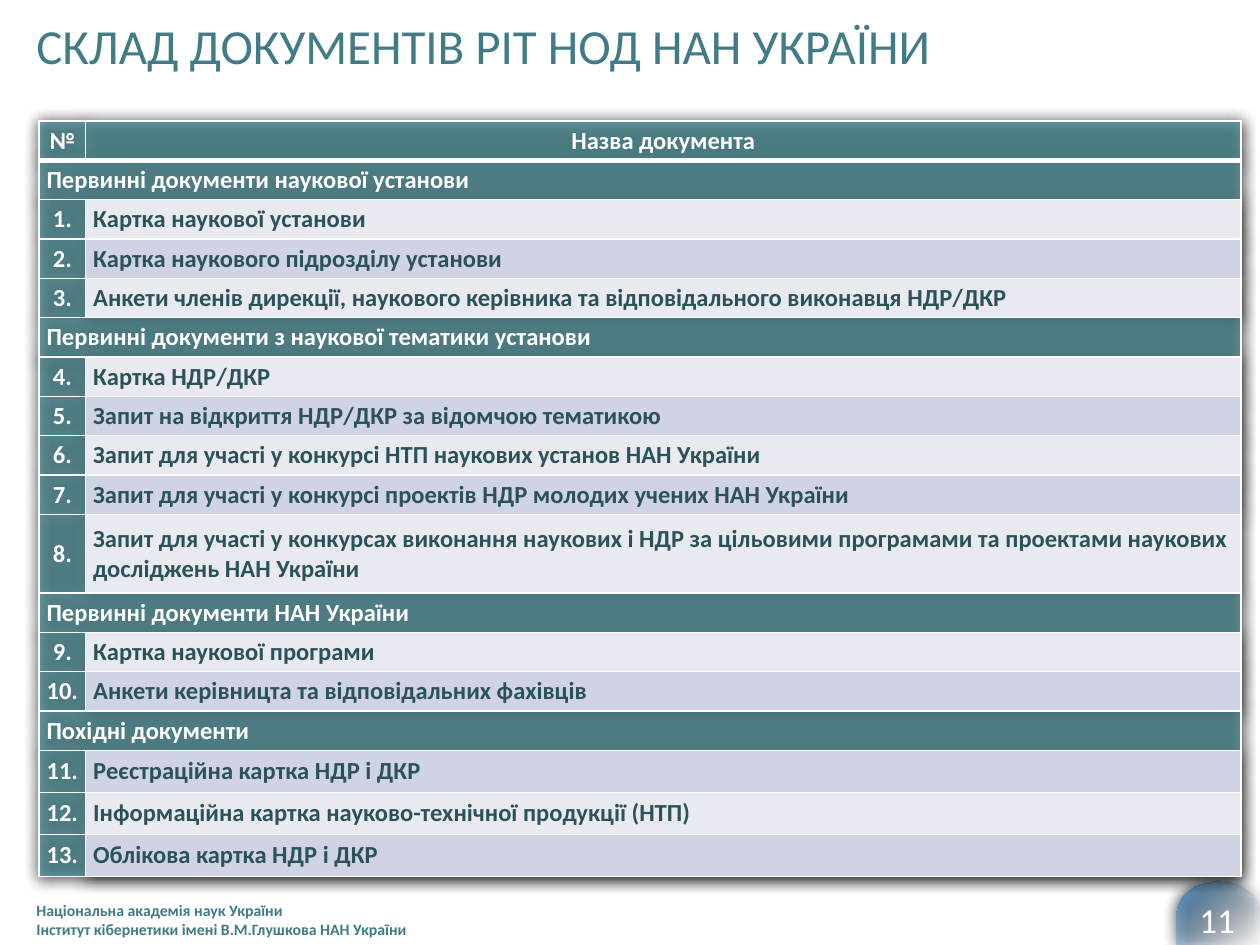
from itertools import count

from lxml.etree import SubElement
from pptx import Presentation
from pptx.dml.color import RGBColor
from pptx.enum.shapes import MSO_SHAPE as Shape
from pptx.enum.text import MSO_ANCHOR as Anchor, PP_ALIGN as Align
from pptx.oxml import parse_xml
from pptx.oxml.ns import nsdecls, qn
from pptx.util import Inches, Pt

COLORS = {
    "title": "417B85", "number": "FEFFFF", "white": "FFFFFF", "black": "000000",
    "teal": "4D9099", "ink": "2B5259", "light": "E9EAF1", "dark": "D0D3E3",
    "mist": "E5E9EE", "blue": "3477B2",
}
HEADINGS = ("№", "Назва документа")
SECTIONS = [
    ("Первинні документи наукової установи", [
        "Картка наукової установи",
        "Картка наукового підрозділу установи",
        "Анкети членів дирекції, наукового керівника та відповідального виконавця НДР/ДКР",
    ]),
    ("Первинні документи з наукової тематики установи", [
        "Картка НДР/ДКР",
        "Запит на відкриття НДР/ДКР за відомчою тематикою",
        "Запит для участі у конкурсі НТП наукових установ НАН України",
        "Запит для участі у конкурсі проектів НДР молодих учених НАН України",
        "Запит для участі у конкурсах виконання наукових і НДР за цільовими програмами "
        "та проектами наукових досліджень НАН України",
    ]),
    ("Первинні документи НАН України", [
        "Картка наукової програми",
        "Анкети керівницта та відповідальних фахівців",
    ]),
    ("Похідні документи", [
        "Реєстраційна картка НДР і ДКР",
        "Інформаційна картка науково-технічної продукції (НТП)",
        "Облікова картка НДР і ДКР",
    ]),
]
ROW = 5 / 16
LONG_ROW, LONG_TEXT = 2 * ROW, 100
TALL_ROW, TALL_COUNT = 1 / 3, 3
COLUMNS = (0.37, 9.17)


def write(frame, text, size=14, color="white", bold=False, align=Align.LEFT):
    """Fill a text frame, one paragraph for each line of text."""
    frame.word_wrap = True
    frame.text = text
    for para in frame.paragraphs:
        para.alignment = align
        for span in para.runs:
            span.font.name = "Calibri"
            span.font.size = Pt(size)
            span.font.bold = bold
            span.font.color.rgb = RGBColor.from_string(COLORS[color])


def add_text(page, box, text, **style):
    """Place a vertically centred text box."""
    label = page.shapes.add_textbox(*map(Inches, box))
    write(label.text_frame, text, **style)
    label.text_frame.vertical_anchor = Anchor.MIDDLE


def add_color(parent, color, opacity=100):
    """Append a colour element with its opacity in per cent."""
    tint = SubElement(parent, qn("a:srgbClr"), val=COLORS[color])
    SubElement(tint, qn("a:alpha"), val=str(opacity * 1000))


def set_gradient(shape, stops, angle):
    """Give a shape a linear gradient of (position, colour, opacity) stops."""
    gradient = parse_xml(f'<a:gradFill {nsdecls("a")}><a:gsLst/></a:gradFill>')
    for position, color, opacity in stops:
        stop = SubElement(gradient[0], qn("a:gs"), pos=str(position * 1000))
        add_color(stop, color, opacity)
    SubElement(gradient, qn("a:lin"), ang=str(angle * 60000), scaled="0")
    shape._element.spPr.find(qn("a:prstGeom")).addnext(gradient)


def soft_shadow():
    """Return an effect list with the blurred black shadow."""
    effects = parse_xml(f'<a:effectLst {nsdecls("a")}/>')
    shadow = SubElement(effects, qn("a:outerShdw"), blurRad=str(Pt(8.5)),
                        dist=str(Pt(1)), dir="5400000", algn="ctr", rotWithShape="0")
    add_color(shadow, "black")
    return effects


def add_title(page, box, text):
    """Place the title on its fading white band."""
    band = page.shapes.add_shape(Shape.RECTANGLE, *map(Inches, box))
    band.shadow.inherit = False
    band.line.fill.background()
    stops = [(0, "white", 49), (15, "white", 100), (54, "white", 70), (100, "white", 0)]
    set_gradient(band, stops, 0)
    write(band.text_frame, text, size=28, color="title")
    band.text_frame.vertical_anchor = Anchor.MIDDLE


def add_badge(page, box):
    """Place the rounded tab behind the page number."""
    badge = page.shapes.add_shape(Shape.FLOWCHART_DELAY, *map(Inches, box))
    badge.line.fill.background()
    badge.rotation = 270
    properties = badge._element.spPr
    properties.find(qn("a:xfrm")).set("flipV", "1")
    set_gradient(badge, [(0, "mist", 0), (100, "blue", 100)], 45)
    properties.append(soft_shadow())


def style_cell(cell, text, fill, opacity=100, bottom=1, inset=0.06, **style):
    """Write a cell and set its borders, fill and margins."""
    properties = cell._tc.get_or_add_tcPr()
    for side, width in (("L", 1), ("R", 1), ("T", 1), ("B", bottom)):
        border = SubElement(properties, qn(f"a:ln{side}"), w=str(Pt(width)))
        add_color(SubElement(border, qn("a:solidFill")), "white")
    add_color(SubElement(properties, qn("a:solidFill")), fill, opacity)
    cell.margin_left = cell.margin_right = Inches(inset)
    cell.margin_top = cell.margin_bottom = 0
    cell.vertical_anchor = Anchor.MIDDLE
    write(cell.text_frame, text, bold=True, **style)


def add_documents(page, left, top):
    """Place the numbered table of documents grouped by section."""
    numbers = count(1)
    rows = []
    for section, documents in SECTIONS:
        rows.append((section, None))
        rows.extend((f"{next(numbers)}.", name) for name in documents)
    heights = [ROW] + [LONG_ROW if name and len(name) > LONG_TEXT else ROW
                       for _, name in rows]
    heights[-TALL_COUNT:] = [TALL_ROW] * TALL_COUNT
    size = (sum(COLUMNS), sum(heights))
    table = page.shapes.add_table(len(heights), len(COLUMNS),
                                  *map(Inches, (left, top, *size))).table
    table.first_row = table.horz_banding = False
    table._tbl.tblPr.insert(0, soft_shadow())
    for column, width in zip(table.columns, COLUMNS):
        column.width = Inches(width)
    for row, height in zip(table.rows, heights):
        row.height = Inches(height)

    for column, (heading, opacity) in enumerate(zip(HEADINGS, (69, 72))):
        style_cell(table.cell(0, column), heading, "teal", opacity, bottom=3,
                   align=Align.CENTER)
    for index, (label, name) in enumerate(rows, 1):
        first, second = table.cell(index, 0), table.cell(index, 1)
        if name is None:
            first.merge(second)
            style_cell(first, label, "teal", 69)
        else:
            style_cell(first, label, "teal", 69, inset=0, align=Align.CENTER)
            style_cell(second, name, "dark" if index % 2 else "light", color="ink")


def build():
    """Build the slide and save the deck."""
    deck = Presentation()
    deck.slide_width, deck.slide_height = Inches(10), Inches(7.5)
    page = deck.slides.add_slide(deck.slide_layouts[6])
    add_badge(page, (9.41, 6.91, 0.51, 0.66))
    add_title(page, (0.19, 0, 9.81, 0.72), "СКЛАД ДОКУМЕНТІВ РІТ НОД НАН УКРАЇНИ")
    add_text(page, (0.19, 7.1, 4.42, 0.4),
             "Національна академія наук України\n"
             "Інститут кібернетики імені В.М.Глушкова НАН України",
             size=9, color="title", bold=True)
    add_text(page, (9.34, 7.1, 0.64, 0.4), "11", size=20, color="number",
             align=Align.CENTER)
    add_documents(page, 0.31, 0.96)
    deck.save("out.pptx")


if __name__ == "__main__":
    build()
